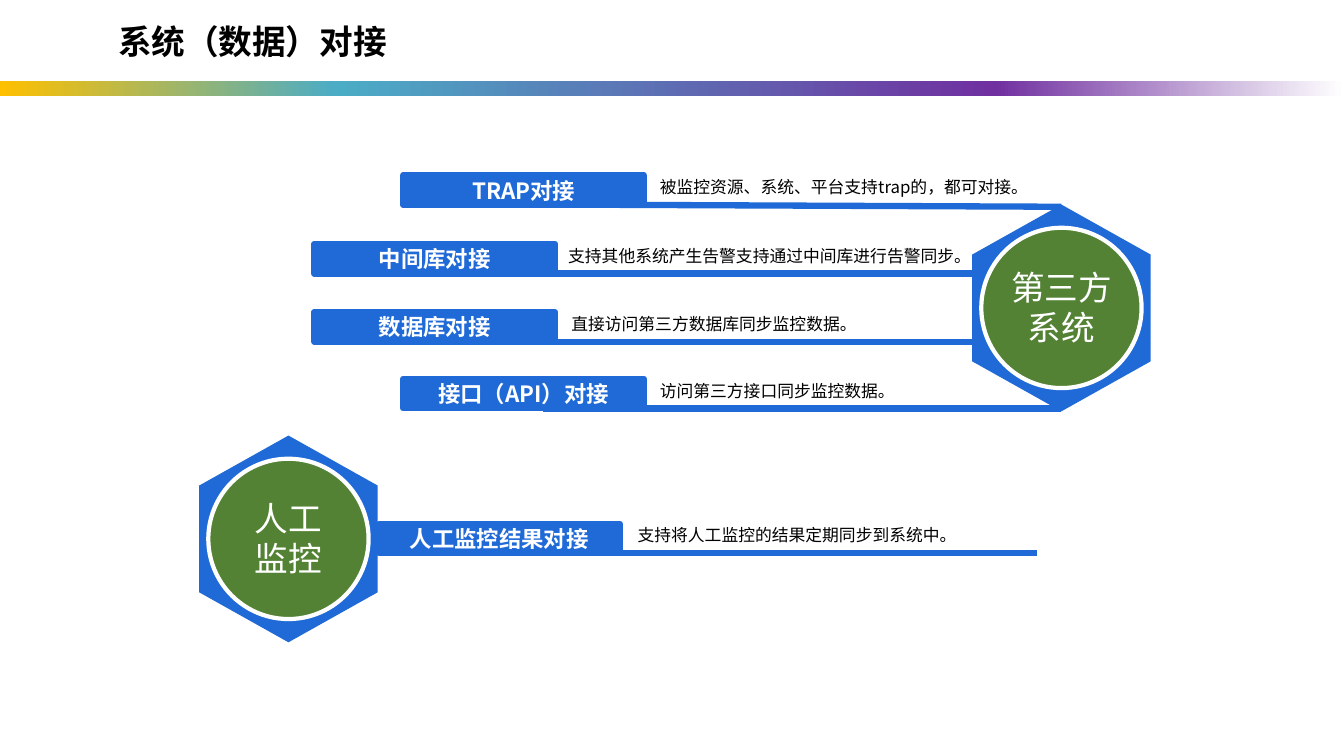
"""Build the slide on system and data integration."""
from dataclasses import dataclass

from lxml import etree
from pptx import Presentation
from pptx.dml.color import RGBColor
from pptx.enum.shapes import MSO_CONNECTOR, MSO_SHAPE as SHAPE
from pptx.enum.text import MSO_ANCHOR as ANCHOR, MSO_AUTO_SIZE as AUTO, PP_ALIGN as ALIGN
from pptx.oxml.ns import qn
from pptx.util import Cm, Pt

FONT = "Noto Sans CJK SC"
BLUE, GREEN, WHITE, BLACK = "206AD7", "548235", "FFFFFF", "000000"
BAND_STOPS = [(0, "FFC000"), (25, "4BACC6"), (74, "7030A0"), (100, WHITE)]
BAR_W, BAR_H = 6.07, 0.74
HEX_W, HEX_H, DISC = 5.21, 4.5, 4.04


@dataclass
class Hub:
    text: str
    x: float
    y: float


@dataclass
class Link:
    label: str
    detail: str
    left: float
    top: float
    line_left: float
    line_right: float
    detail_left: float
    detail_width: float
    drop: float = 0


HUBS = [Hub("人工\n监控", 7.27, 13.58), Hub("第三方\n系统", 26.75, 7.76)]
LINKS = [
    Link("人工监控结果对接", "支持将人工监控的结果定期同步到系统中。",
         9.55, 13.2, 13.11, 26.14, 15.82, 9.7),
    Link("中间库对接", "支持其他系统产生告警支持通过中间库进行告警同步。",
         7.92, 6.15, 11.46, 24.51, 14.07, 11.07),
    Link("TRAP对接", "被监控资源、系统、平台支持trap的，都可对接。",
         10.16, 4.42, 15.21, 26.75, 16.38, 10.01, 0.05),
    Link("数据库对接", "直接访问第三方数据库同步监控数据。",
         7.92, 7.87, 11.46, 24.51, 14.15, 8.76),
    Link("接口（API）对接", "访问第三方接口同步监控数据。",
         10.16, 9.55, 13.69, 26.75, 16.38, 8.76),
]


def rgb(value: str) -> RGBColor:
    return RGBColor.from_string(value)


def write(tf, text: str, size: int, color: str, bold=False, align=ALIGN.LEFT) -> None:
    tf.text = text
    for p in tf.paragraphs:
        p.alignment = align
        for r in p.runs:
            r.font.size, r.font.bold, r.font.name = Pt(size), bold, FONT
            r.font.color.rgb = rgb(color)
            etree.SubElement(r.font._element, qn("a:ea")).set("typeface", FONT)


def add_shape(slide, kind, left: float, top: float, w: float, h: float,
              fill: str, line: str = "", weight: float = 0):
    sp = slide.shapes.add_shape(kind, Cm(left), Cm(top), Cm(w), Cm(h))
    sp.shadow.inherit = False
    sp.fill.solid()
    sp.fill.fore_color.rgb = rgb(fill)
    if line:
        sp.line.color.rgb = rgb(line)
        sp.line.width = Pt(weight)
    else:
        sp.line.fill.background()
    return sp


def add_text(slide, left: float, top: float, w: float, h: float):
    tf = slide.shapes.add_textbox(Cm(left), Cm(top), Cm(w), Cm(h)).text_frame
    tf.word_wrap = True
    return tf


def add_band(slide) -> None:
    sp = add_shape(slide, SHAPE.RECTANGLE, 0, 2.03, 33.87, 0.38, WHITE)
    sp.fill.gradient()
    sp.fill.gradient_angle = 0
    stops = sp._element.spPr.find(qn("a:gradFill")).find(qn("a:gsLst"))
    for old in list(stops):
        stops.remove(old)
    for pos, color in BAND_STOPS:
        stop = etree.SubElement(stops, qn("a:gs"), pos=str(pos * 1000))
        etree.SubElement(stop, qn("a:srgbClr"), val=color)


def add_title(slide, text: str) -> None:
    title = slide.shapes.title
    title.left, title.top, title.width, title.height = Cm(2.72), Cm(0.41), Cm(24.43), Cm(1.27)
    tf = title.text_frame
    tf.vertical_anchor = ANCHOR.MIDDLE
    tf.auto_size = AUTO.NONE
    write(tf, text, 24, BLACK, True)


def add_hub(slide, hub: Hub) -> None:
    sp = add_shape(slide, SHAPE.HEXAGON, hub.x - HEX_W / 2, hub.y - HEX_H / 2, HEX_W, HEX_H, BLUE)
    sp.adjustments[0] = 0.28
    sp.rotation = 270
    add_shape(slide, SHAPE.OVAL, hub.x - DISC / 2, hub.y - DISC / 2, DISC, DISC, GREEN, WHITE, 3)
    tf = add_text(slide, hub.x - 1.75, hub.y - 1.16, 3.5, 2.31)
    write(tf, hub.text, 24, WHITE, align=ALIGN.CENTER)


def add_link(slide, link: Link) -> None:
    y = link.top + BAR_H
    line = slide.shapes.add_connector(MSO_CONNECTOR.STRAIGHT, Cm(link.line_left), Cm(y),
                                      Cm(link.line_right), Cm(y + link.drop))
    line.line.color.rgb = rgb(BLUE)
    line.line.width = Pt(4.5)
    etree.SubElement(line._element.spPr, qn("a:effectLst"))
    bar = add_shape(slide, SHAPE.RECTANGLE, link.left, link.top, BAR_W, BAR_H, BLUE, BLUE, 4.5)
    bar.text_frame.vertical_anchor = ANCHOR.MIDDLE
    write(bar.text_frame, link.label, 16, WHITE, True, ALIGN.CENTER)
    tf = add_text(slide, link.detail_left, link.top - 0.09, link.detail_width, 1.27)
    write(tf, link.detail, 12, BLACK)


def main() -> None:
    prs = Presentation()
    prs.slide_width, prs.slide_height = Cm(33.87), Cm(19.05)
    slide = prs.slides.add_slide(prs.slide_layouts[5])
    add_band(slide)
    add_title(slide, "系统（数据）对接")
    for hub in HUBS:
        add_hub(slide, hub)
    for link in LINKS:
        add_link(slide, link)
    prs.save("out.pptx")


if __name__ == "__main__":
    main()
